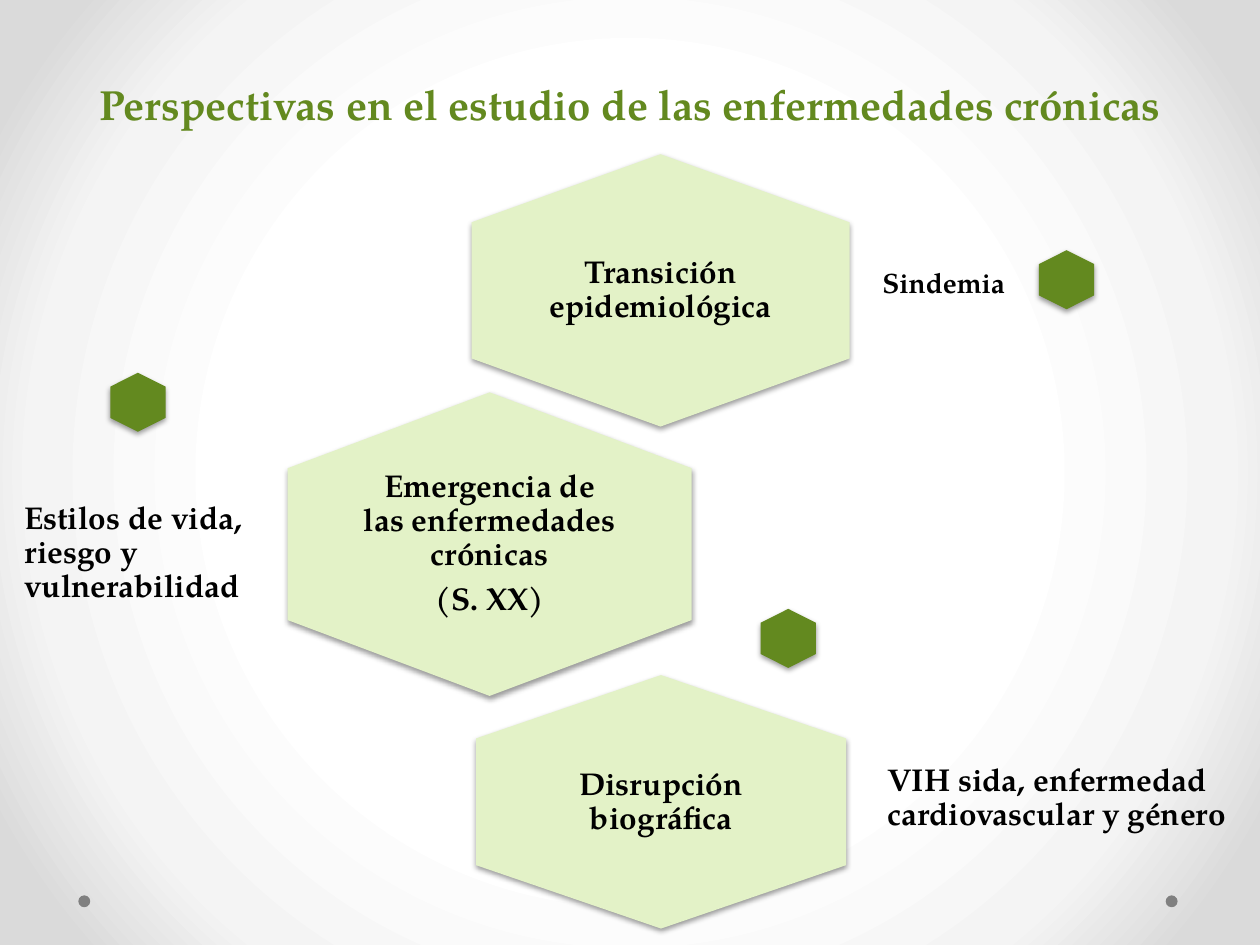
from pptx import Presentation
from pptx.dml.color import RGBColor
from pptx.enum.shapes import MSO_SHAPE
from pptx.enum.text import MSO_ANCHOR, MSO_AUTO_SIZE, PP_ALIGN
from pptx.oxml import parse_xml
from pptx.oxml.ns import nsdecls, qn
from pptx.util import Cm, Pt

HEX, OVAL = MSO_SHAPE.HEXAGON, MSO_SHAPE.OVAL
LEFT, CENTER = PP_ALIGN.LEFT, PP_ALIGN.CENTER
MIDDLE, BOTTOM = MSO_ANCHOR.MIDDLE, MSO_ANCHOR.BOTTOM
FIXED = MSO_AUTO_SIZE.NONE

FONT = "TeX Gyre Pagella"
GREEN, PALE, GRAY, BLACK = "63891F", "E3F2C7", "808080", "000000"
STOPS = [(50, "FFFFFF"), (76, "F4F4F4"), (92, "DADADA")]
DOT = (1.12, 1.19)

# Lengths in cm. Box is on the slide; note (box) and dot (centre)
# are measured from the top left corner of that box.
ROWS = [
    dict(box=(9.49, 3.11, 7.65, 5.49), label=["Transición epidemiológica"],
         note=(8.12, 1.61, 6.73, 2.03), text="Sindemia", size=16,
         dot=(12.01, 2.53)),
    dict(box=(5.78, 7.91, 8.18, 6.12),
         label=["Emergencia de las enfermedades crónicas", "(S. XX)"],
         note=(-5.47, 1.87, 5.89, 2.74),
         text="Estilos de vida, riesgo y vulnerabilidad", size=18,
         dot=(-3, 0.2)),
    dict(box=(9.58, 13.61, 7.49, 5.11), label=["Disrupción biográfica"],
         note=(8.13, 0.84, 7.19, 3.28),
         text="VIH sida, enfermedad cardiovascular y género", size=18,
         dot=(6.31, -0.74)),
]


def color(code):
    return RGBColor.from_string(code)


def write(frame, lines, size=18, tint=BLACK, align=LEFT, anchor=MIDDLE,
          space=0.9, after=0.35):
    """Fill a text frame; after is a share of the text size."""
    frame.word_wrap = True
    frame.auto_size = FIXED
    frame.vertical_anchor = anchor
    for i, line in enumerate(lines):
        para = frame.add_paragraph() if i else frame.paragraphs[0]
        para.alignment = align
        para.line_spacing = space
        para.space_before = Pt(0)
        para.space_after = Pt(size * after)
        run = para.add_run()
        run.text = line
        run.font.name = FONT
        run.font.size = Pt(size)
        run.font.bold = True
        run.font.color.rgb = color(tint)


def label(slide, box, lines, **style):
    frame = slide.shapes.add_textbox(*map(Cm, box)).text_frame
    frame.margin_left = frame.margin_right = Cm(0.18)
    frame.margin_top = frame.margin_bottom = Cm(0.18)
    write(frame, lines, **style)


def solid(slide, kind, box, tint):
    shape = slide.shapes.add_shape(kind, *map(Cm, box))
    shape.fill.solid()
    shape.fill.fore_color.rgb = color(tint)
    shape.line.fill.background()
    shape.shadow.inherit = False
    return shape


def hexagon(slide, mid, wide, high, tint):
    """Draw a hexagon that stands on a corner, centred on mid."""
    x, y = mid
    shape = solid(slide, HEX, (x - high / 2, y - wide / 2, high, wide), tint)
    shape.rotation = 90
    shape.adjustments[0] = 0.25
    shape.adjustments[1] = 1.15
    shape._element.spPr.find(qn("a:effectLst")).append(parse_xml(
        f'<a:outerShdw {nsdecls("a")} blurRad="39000" dist="20000" '
        'dir="5400000" rotWithShape="0"><a:srgbClr val="000000">'
        '<a:alpha val="38000"/></a:srgbClr></a:outerShdw>'))


def row(slide, box, label_lines, note, text, size, dot):
    x, y, wide, high = box
    mid = (x + wide / 2, y + high / 2)
    hexagon(slide, mid, wide, high, PALE)
    inner = (x + wide / 6, y + high / 6, wide * 2 / 3, high * 2 / 3)
    label(slide, inner, label_lines, align=CENTER)
    dx, dy, *span = note
    label(slide, (x + dx, y + dy, *span), [text], size=size)
    hexagon(slide, (x + dot[0], y + dot[1]), *DOT, GREEN)


def backdrop(slide):
    slide.background.fill.gradient()
    old = slide._element.find(".//" + qn("a:gradFill"))
    stops = "".join(f'<a:gs pos="{at * 1000}"><a:srgbClr val="{code}"/></a:gs>'
                    for at, code in STOPS)
    old.getparent().replace(old, parse_xml(
        f'<a:gradFill {nsdecls("a")} rotWithShape="1"><a:gsLst>{stops}'
        '</a:gsLst><a:path path="circle"><a:fillToRect l="50000" t="50000" '
        'r="50000" b="50000"/></a:path></a:gradFill>'))
    for x in (1.58, 23.5):
        solid(slide, OVAL, (x, 18.05, 0.24, 0.24), GRAY)


def heading(slide, box, text):
    title = slide.shapes.title
    title.left, title.top, title.width, title.height = map(Cm, box)
    write(title.text_frame, [text], size=24, tint=GREEN, align=CENTER,
          anchor=BOTTOM, space=Pt(58), after=0)


def main():
    deck = Presentation()
    deck.slide_width, deck.slide_height = Cm(25.4), Cm(19.05)
    slide = deck.slides.add_slide(deck.slide_layouts[5])
    backdrop(slide)
    heading(slide, (1.27, 0, 22.86, 2.72),
            "Perspectivas en el estudio de las enfermedades crónicas")
    for part in ROWS:
        row(slide, part["box"], part["label"], part["note"], part["text"],
            part["size"], part["dot"])
    deck.save("out.pptx")


if __name__ == "__main__":
    main()
